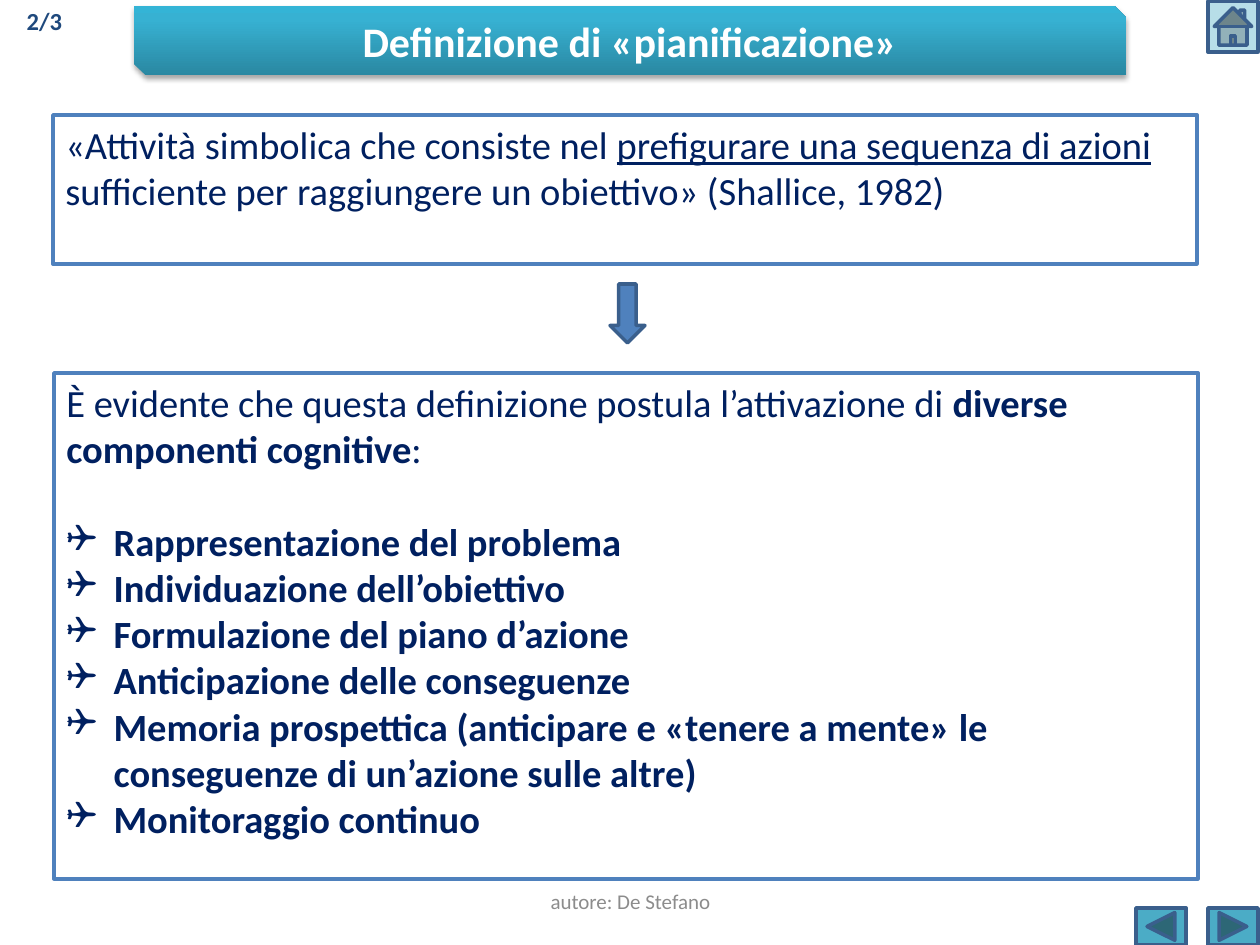
from pptx import Presentation, util as u
from pptx.dml.color import RGBColor
from pptx.enum import shapes, text
from pptx.oxml import parse_xml
from pptx.oxml.ns import nsdecls

SCALE = 914400 / 126
NAVY, BLUE, EDGE, TEAL = "002060", "4F81BD", "3A5F8C", "4BACC6"
KIND = shapes.MSO_SHAPE
LEFT, MID = text.PP_ALIGN.LEFT, text.PP_ALIGN.CENTER
TOP, CORE = text.MSO_ANCHOR.TOP, text.MSO_ANCHOR.MIDDLE

deck = Presentation()
deck.slide_width, deck.slide_height = u.Inches(10), u.Inches(7.5)
slide = deck.slides.add_slide(deck.slide_layouts[6])


def draw(kind, box, fill=None, edge=None):
    item = slide.shapes.add_shape(kind, *[round(n * SCALE) for n in box])
    item.shadow.inherit = False
    if fill:
        item.fill.solid()
        item.fill.fore_color.rgb = RGBColor.from_string(fill)
    else:
        item.fill.background()
    if edge:
        item.line.color.rgb = RGBColor.from_string(edge)
        item.line.width = u.Pt(2)
    else:
        item.line.fill.background()
    return item


def write(item, paras, size, color, align=LEFT, anchor=TOP):
    """Fill a shape with paragraphs, each a list of (words, bold, underline)."""
    frame = item.text_frame
    frame.word_wrap, frame.vertical_anchor = True, anchor
    for i, parts in enumerate(paras):
        para = frame.add_paragraph() if i else frame.paragraphs[0]
        para.alignment = align
        for words, bold, under in parts:
            run = para.add_run()
            run.text = words
            font = run.font
            font.name, font.size = "Calibri", u.Pt(size)
            font.bold, font.underline = bold, under
            font.color.rgb = RGBColor.from_string(color)


# Footer, home button and page count
foot = draw(KIND.RECTANGLE, (431, 876, 399, 50))
write(foot, [[("autore: De Stefano", False, False)]], 12, "8C8C8C", MID, CORE)
draw(KIND.ACTION_BUTTON_HOME, (1208, 1, 50, 51), "B7DEE8", EDGE)
page = draw(KIND.RECTANGLE, (0, 0, 89, 43), "FFFFFF")
write(page, [[("2/3", True, False)]], 14, "1F497D", MID)

# Title banner with gradient and soft shadow
title = draw(KIND.SNIP_2_DIAG_RECTANGLE, (134, 6, 992, 69))
write(title, [[("Definizione di «pianificazione»", True, False)]], 24, "FFFFFF", MID, CORE)
title.fill.gradient()
title.fill.gradient_angle = 90
stops = title.fill.gradient_stops
stops[0].color.rgb = RGBColor.from_string("2A88A2")
stops[1].color.rgb = RGBColor.from_string("34B4D6")
stops[0].position, stops[1].position = 0, 1
props = title.element.spPr
props.find(".//{*}gsLst").insert(1, parse_xml(
    f'<a:gs {nsdecls("a")} pos="80000"><a:srgbClr val="37B1D2"/></a:gs>'))
props.find("{*}effectLst").append(parse_xml(
    f'<a:outerShdw {nsdecls("a")} blurRad="39370" dist="22860" dir="5400000" rotWithShape="0">'
    '<a:srgbClr val="000000"><a:alpha val="35000"/></a:srgbClr></a:outerShdw>'))

# Navigation buttons
draw(KIND.ACTION_BUTTON_FORWARD_OR_NEXT, (1208, 908, 50, 37), TEAL, EDGE)
draw(KIND.ACTION_BUTTON_BACK_OR_PREVIOUS, (1136, 908, 50, 37), TEAL, EDGE)

# Definition, arrow and components
quote = draw(KIND.RECTANGLE, (53, 115, 1144, 149), "FFFFFF", BLUE)
write(quote, [[
    ("«Attività simbolica che consiste nel ", False, False),
    ("prefigurare una sequenza di azioni ", False, True),
    ("sufficiente per raggiungere un obiettivo» (Shallice, 1982)", False, False),
]], 22, NAVY)
draw(KIND.DOWN_ARROW, (610, 284, 35, 59), BLUE, EDGE)

skills = [
    "Rappresentazione del problema",
    "Individuazione dell’obiettivo",
    "Formulazione del piano d’azione",
    "Anticipazione delle conseguenze",
    "Memoria prospettica (anticipare e «tenere a mente» le conseguenze di un’azione sulle altre)",
    "Monitoraggio continuo",
]
intro = [
    ("È evidente che questa definizione postula l’attivazione di ", False, False),
    ("diverse componenti cognitive", True, False),
    (":", False, False),
]
panel = draw(KIND.RECTANGLE, (54, 373, 1144, 506), "FFFFFF", BLUE)
write(panel, [intro] + [[(skill, True, False)] for skill in skills], 22, NAVY)
points = panel.text_frame.paragraphs[1:]
points[0].space_before = u.Pt(26.5)
for point in points:
    form = point._p.get_or_add_pPr()
    form.set("marL", "342900")
    form.set("indent", "-342900")
    form.append(parse_xml(f'<a:buFont {nsdecls("a")} typeface="Wingdings"/>'))
    form.append(parse_xml(f'<a:buChar {nsdecls("a")} char="❑"/>'))

deck.save("out.pptx")
